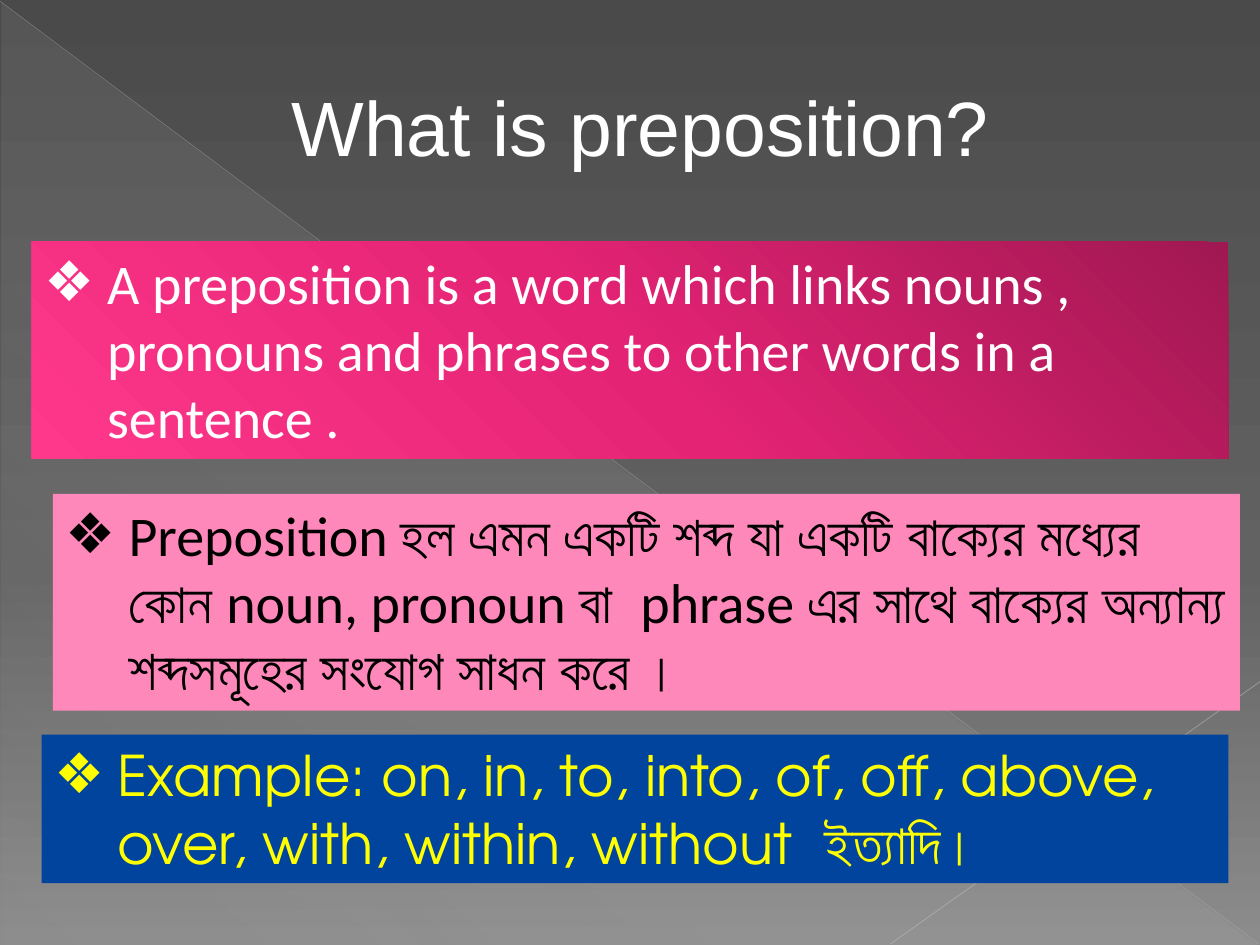
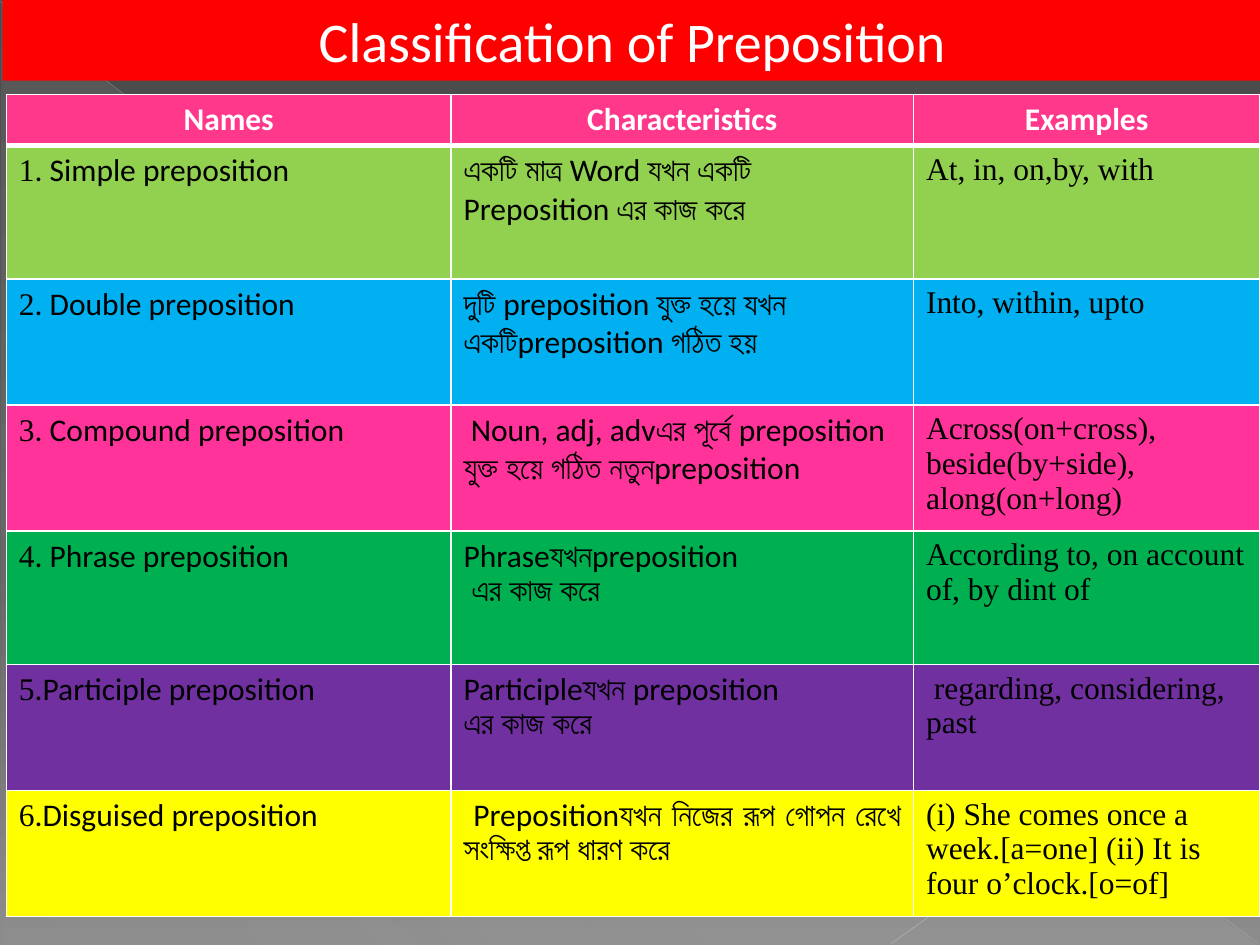
from lxml import etree
from pptx import Presentation
from pptx import util as u
from pptx.dml.color import RGBColor
from pptx.enum import shapes, text
from pptx.oxml import ns

COLORS = {
    "white": "FFFFFF", "black": "000000", "yellow": "FFFF00", "red": "FF0000",
    "rose": "FF388C", "light_rose": "FF88BA", "navy": "00449E",
    "lime": "92D050", "sky": "00B0F0", "pink": "FF3399", "green": "00B050",
    "purple": "7030A0", "glow": "D2D2D2", "diagonal": "BFBFBF", "corner": "C6C6C6",
}
BACKDROP = [(0, "4A4A4A", 100), (60, "626262", 100), (100, "8C8C8C", 100)]
SHEEN = [(0, COLORS["glow"], 10), (70, COLORS["glow"], 8), (100, COLORS["glow"], 1)]
MAGENTA = [(0, "A01852", 100), (50, "E42374", 100), (100, COLORS["rose"], 100)]
SANS, SERIF, ROUND = "Calibri", "Times New Roman", "TeX Gyre Adventor"
ALIGN = text.PP_ALIGN

DEFINITIONS = [
    ("A preposition is a word which links nouns , pronouns and phrases to other words "
     "in a sentence .",
     (0.25, 1.92, 9.5, 1.72), MAGENTA, SANS, "white"),
    ("Preposition হল এমন একটি শব্দ যা একটি বাক্যের মধ্যের কোন noun, pronoun বা  phrase "
     "এর সাথে বাক্যের অন্যান্য শব্দসমূহের সংযোগ সাধন করে ।",
     (0.42, 3.92, 9.42, 1.72), "light_rose", SANS, "black"),
    ("Example: on, in, to, into, of, off, above, over, with, within, without  ইত্যাদি।",
     (0.33, 5.83, 9.42, 1.18), "navy", ROUND, "yellow"),
]
HEADINGS = ["Names", "Characteristics", "Examples"]
KINDS = [
    ("lime", 1.06, ". Simple preposition",
     ["একটি মাত্র Word যখন একটি", "Preposition এর কাজ করে"],
     "At, in, on,by, with"),
    ("sky", 1, ". Double preposition",
     ["দুটি preposition যুক্ত হয়ে যখন একটিpreposition গঠিত হয়"],
     "Into, within, upto"),
    ("pink", 1, ". Compound preposition",
     [" Noun, adj, advএর পূর্বে preposition যুক্ত হয়ে গঠিত নতুনpreposition"],
     "Across(on+cross), beside(by+side), along(on+long)"),
    ("green", 1.06, ". Phrase preposition",
     ["Phraseযখনpreposition", " এর কাজ করে"],
     "According to, on account of, by dint of"),
    ("purple", 1, ".Participle preposition",
     ["Participleযখন preposition", "এর কাজ করে"],
     " regarding, considering, past"),
    ("yellow", 1, ".Disguised preposition",
     [" Prepositionযখন নিজের রূপ গোপন রেখে সংক্ষিপ্ত রূপ ধারণ করে"],
     "(i) She comes once a week.[a=one] (ii) It is four o’clock.[o=of]"),
]


def inches(*lengths):
    return [u.Inches(length) for length in lengths]


def write(frame, paragraphs, size=18, font=SANS, color="black", bold=False,
          align=ALIGN.LEFT):
    """Fill a text frame; a paragraph is a string or a list of (string, font) runs."""
    frame.word_wrap = True
    for index, content in enumerate(paragraphs):
        paragraph = frame.add_paragraph() if index else frame.paragraphs[0]
        paragraph.alignment = align
        paragraph.space_before = u.Pt(0)
        runs = [(content, font)] if isinstance(content, str) else content
        for words, face in runs:
            run = paragraph.add_run()
            run.text = words
            run.font.size = u.Pt(size)
            run.font.name = face
            run.font.bold = bold
            run.font.color.rgb = RGBColor.from_string(COLORS[color])


def paint(fill, color):
    fill.solid()
    fill.fore_color.rgb = RGBColor.from_string(COLORS[color])


def paint_gradient(fill, owner, stops, angle):
    """Give fill, held in the owner element, (position, colour, opacity) stops."""
    fill.gradient()
    fill.gradient_angle = 360 - angle
    stop_list = owner.xpath(".//a:gradFill/a:gsLst")[0]
    for old_stop in list(stop_list):
        stop_list.remove(old_stop)
    for position, color, opacity in stops:
        stop = etree.SubElement(stop_list, ns.qn("a:gs"), pos=str(position * 1000))
        tint = etree.SubElement(stop, ns.qn("a:srgbClr"), val=color)
        set_opacity(tint, opacity)


def set_opacity(tint, percent):
    if percent < 100:
        etree.SubElement(tint, ns.qn("a:alpha"), val=str(percent * 1000))


def add_faint_line(slide, start, end, color, width, opacity):
    line = slide.shapes.add_connector(
        shapes.MSO_CONNECTOR.STRAIGHT, *inches(*start, *end))
    line.line.width = u.Pt(width)
    line.line.color.rgb = RGBColor.from_string(COLORS[color])
    set_opacity(line._element.xpath(".//a:ln//a:srgbClr")[0], opacity)
    etree.SubElement(line._element.spPr, ns.qn("a:effectLst"))
    return line


def decorate_master(master, slide):
    """Build the shared backdrop on a slide and hand its parts to the master."""
    paint_gradient(master.background.fill, master._element, BACKDROP, 90)
    sheen = slide.shapes.add_shape(
        shapes.MSO_SHAPE.RIGHT_TRIANGLE, *inches(0.01, 0.02, 9.98, 7.48))
    sheen.shadow.inherit = False
    sheen.line.fill.background()
    paint_gradient(sheen.fill, sheen._element, SHEEN, 133)
    diagonal = add_faint_line(slide, (0, 0.01), (9.99, 7.49), "diagonal", 0.39, 35)
    corner = add_faint_line(slide, (10, 5.41), (7.07, 7.49), "corner", 0.47, 45)
    for number, part in enumerate((sheen, diagonal, corner)):
        part._element.xpath(".//p:cNvPr")[0].set("id", str(100 + number))
        master.shapes._spTree.insert(2 + number, part._element)


def place(holder, box):
    holder.left, holder.top, holder.width, holder.height = inches(*box)
    holder.text_frame.auto_size = text.MSO_AUTO_SIZE.NONE


def set_title(slide, words, box, size, font):
    title = slide.shapes.title
    place(title, box)
    title.text_frame.vertical_anchor = text.MSO_ANCHOR.MIDDLE
    write(title.text_frame, [words], size=size, font=font, color="white",
          align=ALIGN.CENTER)
    return title


def fill_definition(holder, words, box, background, font, color):
    place(holder, box)
    if isinstance(background, str):
        paint(holder.fill, background)
    else:
        paint_gradient(holder.fill, holder._element, background, 135)
    frame = holder.text_frame
    frame.vertical_anchor = text.MSO_ANCHOR.TOP
    write(frame, [words], size=32, font=font, color=color)
    properties = frame.paragraphs[0]._p.get_or_add_pPr()
    properties.set("marL", str(u.Inches(0.5)))
    properties.set("indent", str(-u.Inches(0.5)))
    etree.SubElement(properties, ns.qn("a:buChar"), char="❖")


def build_definition_slide(slide):
    set_title(slide, "What is preposition?", (1.17, 0.58, 7.83, 0.84), 44, "Arial")
    bodies = [holder for holder in slide.placeholders
              if holder.placeholder_format.idx > 0]
    for holder, definition in zip(bodies, DEFINITIONS):
        fill_definition(holder, *definition)
    for unused in bodies[len(DEFINITIONS):]:
        unused._element.getparent().remove(unused._element)


def set_borders(cell, top=1, bottom=1):
    properties = cell._tc.get_or_add_tcPr()
    widths = {"lnL": 1, "lnR": 1, "lnT": top, "lnB": bottom}
    for position, (side, width) in enumerate(widths.items()):
        edge = etree.Element(ns.qn(f"a:{side}"), w=str(u.Pt(width)))
        solid = etree.SubElement(edge, ns.qn("a:solidFill"))
        etree.SubElement(solid, ns.qn("a:srgbClr"), val=COLORS["white"])
        properties.insert(position, edge)


def add_classification(slide, left, top):
    widths = [3.53, 3.67, 2.75]
    heights = [0.39] + [kind[1] for kind in KINDS]
    table = slide.shapes.add_table(
        len(heights), len(widths),
        *inches(left, top, sum(widths), sum(heights))).table
    for column, width in zip(table.columns, widths):
        column.width = u.Inches(width)
    for row, height in zip(table.rows, heights):
        row.height = u.Inches(height)

    for cell, heading in zip(table.rows[0].cells, HEADINGS):
        write(cell.text_frame, [heading], color="white", bold=True,
              align=ALIGN.CENTER)
        paint(cell.fill, "rose")
        set_borders(cell, bottom=3)

    for number, (color, _, kind, traits, examples) in enumerate(KINDS, 1):
        name_cell, trait_cell, example_cell = table.rows[number].cells
        write(name_cell.text_frame, [[(str(number), SERIF), (kind, SANS)]])
        last = number == len(KINDS)
        write(trait_cell.text_frame, traits,
              align=ALIGN.JUSTIFY if last else ALIGN.LEFT)
        write(example_cell.text_frame, [examples], font=SERIF)
        for cell in (name_cell, trait_cell, example_cell):
            paint(cell.fill, color)
            set_borders(cell, top=3 if number == 1 else 1)


def build_classification_slide(slide):
    band = set_title(slide, "Classification of Preposition",
                     (0.02, 0, 10, 0.64), 32, SANS)
    paint(band.fill, "red")
    add_classification(slide, 0.05, 0.75)


def main():
    prs = Presentation()
    prs.slide_width, prs.slide_height = inches(10, 7.5)
    comparison = prs.slide_layouts.get_by_name("Comparison")
    title_only = prs.slide_layouts.get_by_name("Title Only")
    definition_slide = prs.slides.add_slide(comparison)
    decorate_master(prs.slide_master, definition_slide)
    build_definition_slide(definition_slide)
    build_classification_slide(prs.slides.add_slide(title_only))
    prs.save("out.pptx")


if __name__ == "__main__":
    main()
